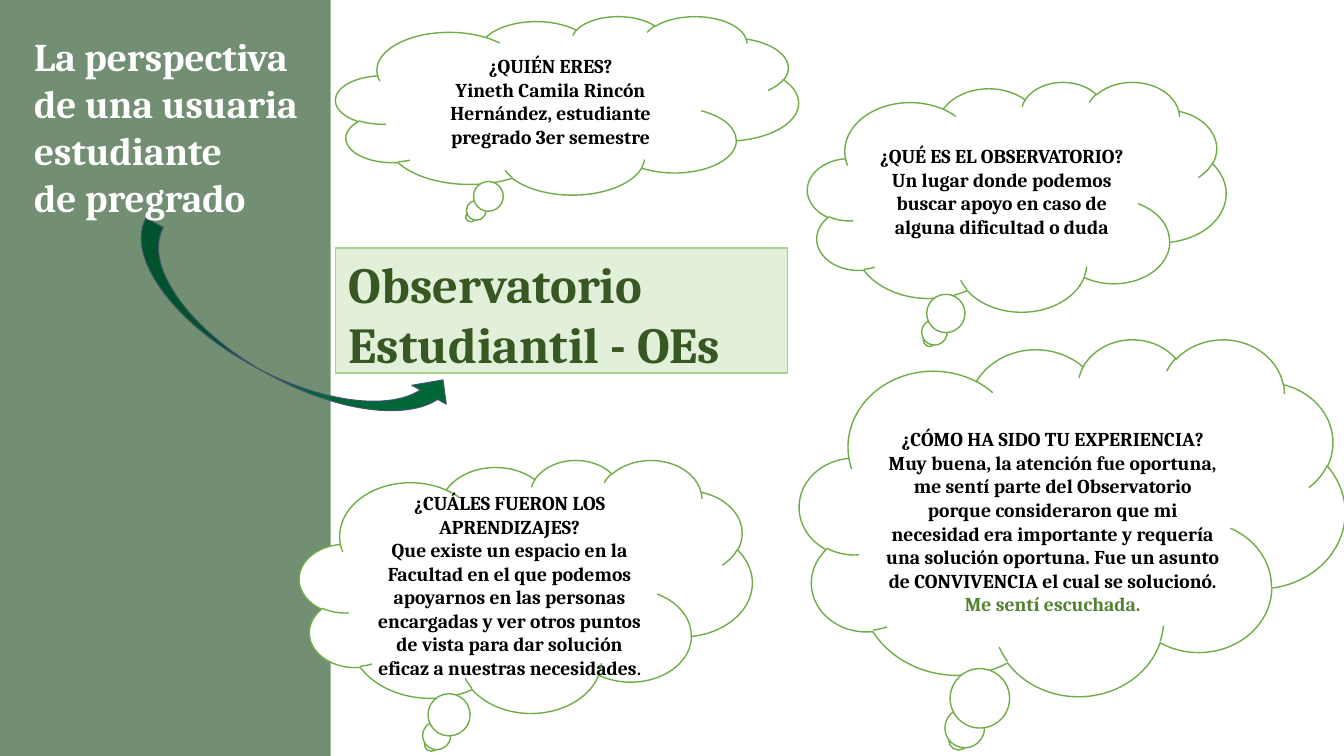
from dataclasses import dataclass

from lxml.etree import SubElement
from pptx import Presentation
from pptx.dml.color import RGBColor
from pptx.enum.shapes import MSO_SHAPE
from pptx.enum.text import MSO_ANCHOR, MSO_AUTO_SIZE, PP_ALIGN
from pptx.oxml.ns import qn
from pptx.shapes.autoshape import Shape
from pptx.slide import Slide
from pptx.text.text import TextFrame
from pptx.util import Inches, Pt


@dataclass(frozen=True)
class Theme:
    font: str = "Cambria"
    panel: str = "003300"
    arrow: str = "006739"
    edge: str = "44546A"
    box: str = "E2F0D9"
    rim: str = "A9D18E"
    cloud: str = "70AD47"
    white: str = "FFFFFF"
    black: str = "000000"
    title: str = "385723"
    accent: str = "548235"
    head_size: int = 36
    side_size: int = 28
    body_size: int = 14
    dot_size: int = 12


@dataclass(frozen=True)
class Box:
    left: float
    top: float
    width: float
    height: float


@dataclass(frozen=True)
class Cloud:
    box: Box
    ask: str
    reply: str
    dot: str = ""
    close: str = ""
    inset: float = 0.05


THEME = Theme()

CLOUDS = [
    Cloud(Box(3.33, 0.16, 4.59, 1.77), "¿QUIÉN ERES?",
          "Yineth Camila Rincón Hernández, estudiante pregrado 3er semestre"),
    Cloud(Box(8.01, 0.81, 4.15, 2.28), "¿QUÉ ES EL OBSERVATORIO?",
          "Un lugar donde podemos buscar apoyo en caso de alguna dificultad o duda"),
    Cloud(Box(7.93, 3.36, 5.41, 3.54), "¿CÓMO HA SIDO TU EXPERIENCIA?",
          "Muy buena, la atención fue oportuna, me sentí parte del Observatorio "
          "porque consideraron que mi necesidad era importante y requería una "
          "solución oportuna. Fue un asunto de CONVIVENCIA el cual se solucionó.",
          close="Me sentí escuchada.", inset=0.3),
    Cloud(Box(2.97, 4.56, 4.49, 2.51), "¿CUÁLES FUERON LOS APRENDIZAJES?",
          "Que existe un espacio en la Facultad en el que podemos apoyarnos en "
          "las personas encargadas y ver otros puntos de vista para dar solución "
          "eficaz a nuestras necesidades", dot=".", inset=0.15),
]


def color(code: str) -> RGBColor:
    return RGBColor.from_string(code)


def place(shape: Shape, box: Box) -> None:
    shape.left, shape.top = Inches(box.left), Inches(box.top)
    shape.width, shape.height = Inches(box.width), Inches(box.height)


def paint(shape: Shape, fill: str, line: str = "", width: float = 1) -> None:
    shape.fill.solid()
    shape.fill.fore_color.rgb = color(fill)
    if line:
        shape.line.color.rgb = color(line)
        shape.line.width = Pt(width)
    else:
        shape.line.fill.background()


def add_shape(slide: Slide, kind: MSO_SHAPE, box: Box) -> Shape:
    shape = slide.shapes.add_shape(kind, 0, 0, 0, 0)
    place(shape, box)
    shape.shadow.inherit = False
    return shape


def write(frame: TextFrame, lines: list[str], size: int, ink: str,
          align: PP_ALIGN = PP_ALIGN.LEFT) -> None:
    frame.word_wrap = True
    frame.auto_size = MSO_AUTO_SIZE.NONE
    frame.text = "\n".join(lines)
    for para in frame.paragraphs:
        para.alignment = align
        para.line_spacing = 1.0
        para.font.name = THEME.font
        para.font.size = Pt(size)
        para.font.bold = True
        para.font.color.rgb = color(ink)


def add_panel(slide: Slide) -> None:
    panel = add_shape(slide, MSO_SHAPE.RECTANGLE, Box(0, 0, 3.28, 7.5))
    paint(panel, THEME.panel)
    tint = panel.fill._xPr.find(qn("a:solidFill"))[0]
    SubElement(tint, qn("a:alpha"), val="55000")


def add_arrow(slide: Slide) -> None:
    arrow = add_shape(slide, MSO_SHAPE.CURVED_RIGHT_ARROW,
                      Box(2.43, 1.58, 0.78, 3.55))
    arrow.rotation = 298.6
    paint(arrow, THEME.arrow, THEME.edge, 0.75)


def set_title(slide: Slide) -> None:
    title = slide.shapes.title
    place(title, Box(3.33, 2.46, 4.48, 1.24))
    paint(title, THEME.box, THEME.rim)
    frame = title.text_frame
    frame.vertical_anchor = MSO_ANCHOR.TOP
    frame.margin_left = Inches(0.13)
    write(frame, ["Observatorio", "Estudiantil - OEs"],
          THEME.head_size, THEME.title)


def add_cloud(slide: Slide, cloud: Cloud) -> None:
    shape = add_shape(slide, MSO_SHAPE.CLOUD_CALLOUT, cloud.box)
    paint(shape, THEME.white, THEME.cloud)
    frame = shape.text_frame
    frame.vertical_anchor = MSO_ANCHOR.MIDDLE
    frame.margin_top = Inches(cloud.inset)
    lines = [cloud.ask, cloud.reply] + ([cloud.close] if cloud.close else [])
    write(frame, lines, THEME.body_size, THEME.black, PP_ALIGN.CENTER)
    if cloud.dot:
        run = frame.paragraphs[1].add_run()
        run.text = cloud.dot
        run.font.size = Pt(THEME.dot_size)
    if cloud.close:
        frame.paragraphs[-1].font.color.rgb = color(THEME.accent)


def add_side(slide: Slide) -> None:
    side = slide.shapes.add_textbox(0, 0, 0, 0)
    place(side, Box(0.24, 0.27, 2.93, 1.99))
    write(side.text_frame,
          ["La perspectiva de una usuaria estudiante", "de pregrado"],
          THEME.side_size, THEME.white)


def main() -> None:
    deck = Presentation()
    deck.slide_width, deck.slide_height = Inches(13.33), Inches(7.5)
    slide = deck.slides.add_slide(deck.slide_layouts[5])
    set_title(slide)
    add_panel(slide)
    add_arrow(slide)
    for cloud in CLOUDS:
        add_cloud(slide, cloud)
    add_side(slide)
    deck.save("out.pptx")


if __name__ == "__main__":
    main()
